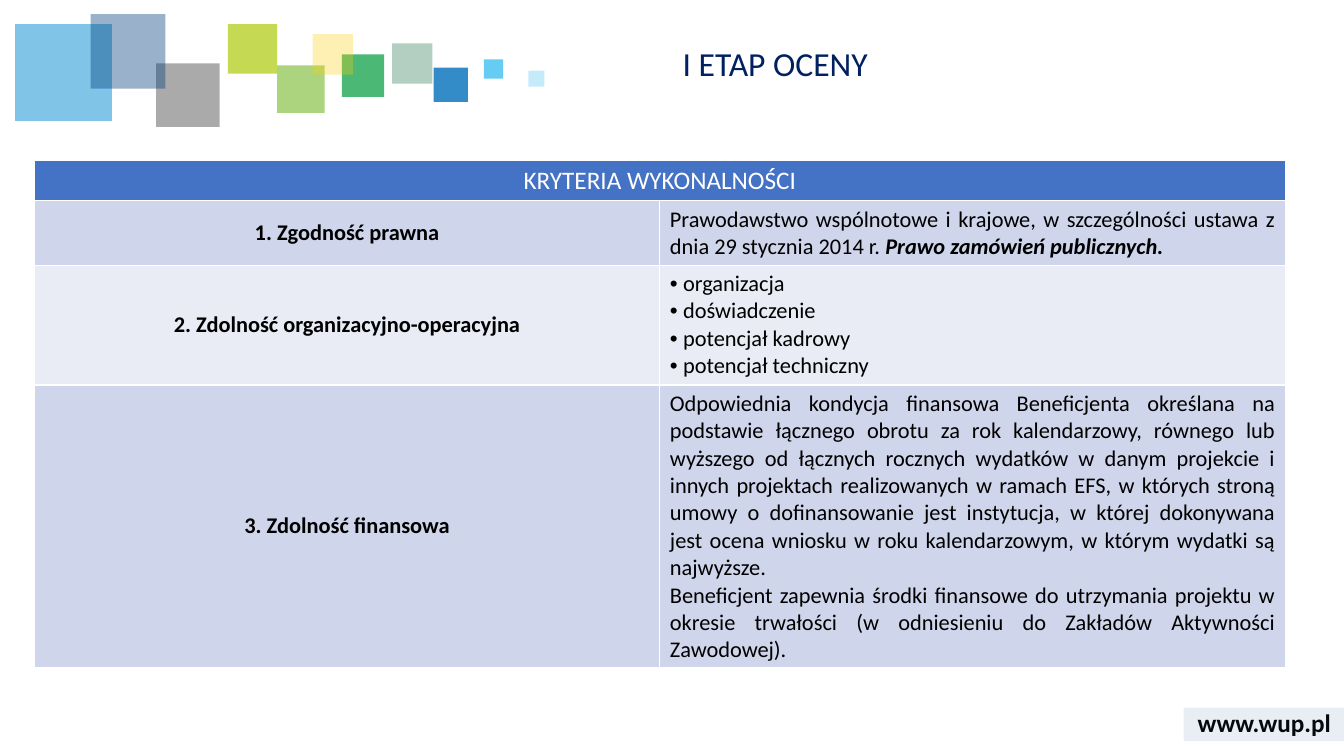
from lxml import etree
from pptx import Presentation
from pptx.dml.color import RGBColor
from pptx.enum.shapes import MSO_SHAPE
from pptx.enum.text import MSO_ANCHOR, PP_ALIGN
from pptx.oxml.ns import qn
from pptx.util import Inches, Pt

RECT = MSO_SHAPE.RECTANGLE
TOP, MID = MSO_ANCHOR.TOP, MSO_ANCHOR.MIDDLE
LEFT, CENTER, JUST = PP_ALIGN.LEFT, PP_ALIGN.CENTER, PP_ALIGN.JUSTIFY

BLACK = RGBColor(0x00, 0x00, 0x00)
WHITE = RGBColor(0xFF, 0xFF, 0xFF)
NAVY = RGBColor(0x00, 0x20, 0x60)
HEAD = RGBColor(0x44, 0x72, 0xC4)
DARK = RGBColor(0xCF, 0xD5, 0xEA)
PALE = RGBColor(0xE9, 0xEB, 0xF5)
STRIP = RGBColor(0x2F, 0x55, 0x97)
PINE = RGBColor(0x00, 0x61, 0x38)
BLUE = RGBColor(0x00, 0x6E, 0xB9)
GREEN = RGBColor(0x00, 0x9A, 0x3C)
AZURE = RGBColor(0x02, 0x8B, 0xD3)
LEAF = RGBColor(0x75, 0xB8, 0x2A)
GRAY = RGBColor(0x57, 0x57, 0x57)
DEEP = RGBColor(0x00, 0x3D, 0x7C)
SKY = RGBColor(0x40, 0xC0, 0xF1)
LIME = RGBColor(0xAF, 0xCA, 0x0B)
GOLD = RGBColor(0xFE, 0xD0, 0x00)

PLAIN = {"name": "Calibri", "size": Pt(16), "bold": False, "italic": False}
BOLD = PLAIN | {"bold": True}
STRONG = BOLD | {"italic": True}
LARGE = PLAIN | {"size": Pt(18)}


def write(par, runs, color, align):
    par.alignment = align
    for text, style in runs:
        run = par.add_run()
        run.text = text
        for key, value in style.items():
            setattr(run.font, key, value)
        run.font.color.rgb = color


def tile(parent, box, color, share):
    shape = parent.add_shape(RECT, *map(Inches, box))
    shape.shadow.inherit = False
    shape.line.fill.background()
    shape.fill.solid()
    shape.fill.fore_color.rgb = color
    tint = next(shape._element.spPr.iter(qn("a:srgbClr")))
    etree.SubElement(tint, qn("a:alpha")).set("val", str(share * 1000))


deck = Presentation()
deck.slide_width, deck.slide_height = Inches(13.33), Inches(7.5)
slide = deck.slides.add_slide(deck.slide_layouts[5])

site = slide.shapes.add_textbox(*map(Inches, (11.74, 6.97, 1.6, 0.4)))
site.text_frame.word_wrap = True
site.text_frame.vertical_anchor = MID
write(site.text_frame.paragraphs[0],
      [("www.wup.pl", LARGE | {"bold": True})], BLACK, CENTER)

squares = [
    (3.89, 0.43, 0.4, PINE, 30),
    (4.3, 0.67, 0.34, BLUE, 80),
    (3.39, 0.54, 0.42, GREEN, 70),
    (0.15, 0.24, 0.96, AZURE, 50),
    (2.75, 0.65, 0.47, LEAF, 60),
    (1.55, 0.63, 0.63, GRAY, 50),
    (0.9, 0.14, 0.74, DEEP, 40),
    (4.8, 0.59, 0.19, SKY, 80),
    (2.26, 0.24, 0.49, LIME, 70),
    (3.1, 0.34, 0.4, GOLD, 30),
    (5.24, 0.7, 0.16, SKY, 30),
]
group = slide.shapes.add_group_shape()
for left, top, side, color, share in squares:
    tile(group.shapes, (left, top, side, side), color, share)
tile(slide.shapes, (11.74, 7.02, 1.6, 0.33), STRIP, 10)

title = slide.shapes.title
title.left, title.top, title.width, title.height = map(
    Inches, (6.67, 0.42, 6.36, 0.55))
title.text_frame.word_wrap = True
title.text_frame.vertical_anchor = TOP
head = title.text_frame.paragraphs[0]
head.line_spacing = 0.9
write(head, [("I ETAP OCENY", PLAIN | {"size": Pt(24)})], NAVY, LEFT)

law = [
    [("Prawodawstwo wspólnotowe i krajowe, w szczególności ustawa "
      "z dnia 29 stycznia 2014 r. ", PLAIN),
     ("Prawo zamówień publicznych.", STRONG)],
]
skills = [[(text, PLAIN)] for text in (
    "organizacja", "doświadczenie", "potencjał kadrowy",
    "potencjał techniczny")]
funds = [[(text, PLAIN)] for text in (
    "Odpowiednia kondycja finansowa Beneficjenta określana "
    "na podstawie łącznego obrotu za rok kalendarzowy, równego lub "
    "wyższego od łącznych rocznych wydatków w danym projekcie "
    "i innych projektach realizowanych w ramach EFS, w których stroną "
    "umowy o dofinansowanie jest instytucja, w której dokonywana "
    "jest ocena wniosku w roku kalendarzowym, w którym wydatki są "
    "najwyższe.",
    "Beneficjent zapewnia środki finansowe do utrzymania projektu "
    "w okresie trwałości (w odniesieniu do Zakładów Aktywności "
    "Zawodowej).")]
rows = [
    (0.4, HEAD, [[("KRYTERIA WYKONALNOŚCI", LARGE)]], []),
    (0.64, DARK, [[("1. Zgodność prawna", BOLD)]], law),
    (1.19, PALE, [[("2. Zdolność organizacyjno-operacyjna", BOLD)]], skills),
    (2.8, DARK, [[("3. Zdolność finansowa", BOLD)]], funds),
]

frame = slide.shapes.add_table(
    len(rows), 2, *map(Inches, (0.34, 1.59, 12.41, 5.03)))
table = frame.table
table.cell(0, 0).merge(table.cell(0, 1))
for r, (height, fill, name, detail) in enumerate(rows):
    table.rows[r].height = Inches(height)
    for c, pars in enumerate((name, detail)):
        cell = table.cell(r, c)
        cell.vertical_anchor = MID if r and not c else TOP
        props = cell._tc.get_or_add_tcPr()
        for edge in ("a:lnL", "a:lnR", "a:lnT", "a:lnB"):
            line = etree.SubElement(props, qn(edge), w=str(Pt(1)))
            paint = etree.SubElement(line, qn("a:solidFill"))
            etree.SubElement(paint, qn("a:srgbClr"), val=str(WHITE))
        cell.fill.solid()
        cell.fill.fore_color.rgb = fill
        for i, runs in enumerate(pars):
            text = cell.text_frame
            par = text.add_paragraph() if i else text.paragraphs[0]
            if pars is skills:
                form = par._p.get_or_add_pPr()
                form.set("marL", str(Inches(0.13)))
                form.set("indent", str(-Inches(0.13)))
                etree.SubElement(form, qn("a:buFont"), typeface="Arial")
                etree.SubElement(form, qn("a:buChar"), char="•")
            write(par, runs, BLACK if r else WHITE, JUST if c else CENTER)

deck.save("out.pptx")
